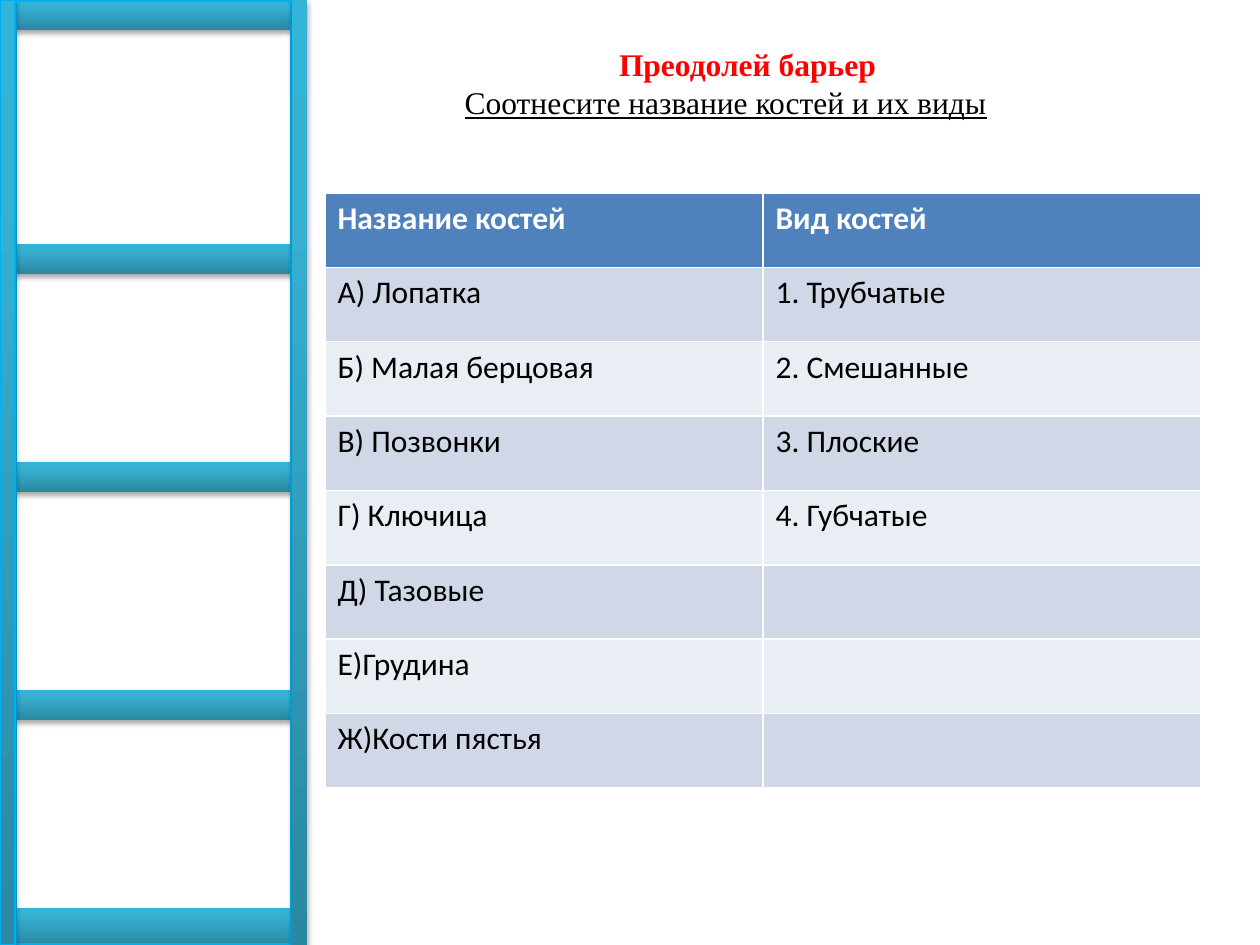
import copy

import lxml.etree
import pptx
import pptx.dml.color
import pptx.enum.shapes
import pptx.enum.text
import pptx.oxml.ns
import pptx.util

EMU_PER_PX = 914400 / 126
COLORS = {
    "dark": "2A88A2", "middle": "37B1D2", "light": "34B4D6", "outline": "00B0F0",
    "shadow": "000000", "red": "FF0000", "black": "000000", "white": "FFFFFF",
    "header": "4F81BD", "odd": "D0D8E8", "even": "E9EDF4",
}
rgb = {name: pptx.dml.color.RGBColor.from_string(value) for name, value in COLORS.items()}
qn = pptx.oxml.ns.qn


def px(*lengths):
    return [pptx.util.Emu(round(length * EMU_PER_PX)) for length in lengths]


def write_text(paragraph, text, font="Calibri", color="black", bold=False,
               underline=False, align=pptx.enum.text.PP_ALIGN.LEFT):
    paragraph.alignment = align
    run = paragraph.add_run()
    run.text = text
    run.font.name = font
    run.font.size = pptx.util.Pt(18)
    run.font.bold = bold
    run.font.underline = underline
    run.font.color.rgb = rgb[color]


presentation = pptx.Presentation()
presentation.slide_width, presentation.slide_height = px(1260, 945)
slide = presentation.slides.add_slide(presentation.slide_layouts[5])

rungs = [(15, 0, 287, 30), (0, 908, 292, 37)] + [(15, top, 287, 30) for top in (690, 462, 244)]
frame = (15, 0, 277, 945)
left_rail = (0, 0, 15, 945)
right_rail = (292, 0, 15, 945)
line_widths = {frame: 2, left_rail: 0.75}

for box in rungs + [frame, left_rail, right_rail]:
    shape = slide.shapes.add_shape(pptx.enum.shapes.MSO_SHAPE.RECTANGLE, *px(*box))
    shape.shadow.inherit = False
    if box in line_widths:
        shape.line.color.rgb = rgb["outline"]
        shape.line.width = pptx.util.Pt(line_widths[box])
    else:
        shape.line.fill.background()
    if box == frame:
        shape.fill.background()
        continue

    shape.fill.gradient()
    shape.fill.gradient_angle = 90
    properties = shape._element.spPr
    stop_list = properties.find(".//" + qn("a:gsLst"))
    stop_list.append(copy.deepcopy(stop_list[-1]))
    stops = zip(shape.fill.gradient_stops, (0, 0.8, 1), ("dark", "middle", "light"))
    for stop, position, color in stops:
        stop.position = position
        stop.color.rgb = rgb[color]

    shadow = lxml.etree.SubElement(
        properties.find(qn("a:effectLst")), qn("a:outerShdw"),
        blurRad=str(pptx.util.Pt(3.1)), dist=str(pptx.util.Pt(1.8)),
        dir="5400000", rotWithShape="0")
    shadow_color = lxml.etree.SubElement(shadow, qn("a:srgbClr"), val=COLORS["shadow"])
    lxml.etree.SubElement(shadow_color, qn("a:alpha"), val="35000")

title = slide.shapes.title
title.left, title.top, title.width, title.height = px(452, 39, 591, 89)
title.text_frame.word_wrap = True
title.text_frame.auto_size = pptx.enum.text.MSO_AUTO_SIZE.NONE
title.text_frame.vertical_anchor = pptx.enum.text.MSO_ANCHOR.TOP
write_text(title.text_frame.paragraphs[0], "Преодолей барьер", font="Times New Roman",
           color="red", bold=True, align=pptx.enum.text.PP_ALIGN.CENTER)
write_text(title.text_frame.add_paragraph(), "Соотнесите название костей и их виды",
           font="Times New Roman", underline=True)

rows = [
    ("Название костей", "Вид костей"),
    ("А) Лопатка", "1. Трубчатые"),
    ("Б) Малая берцовая", "2. Смешанные"),
    ("В) Позвонки", "3. Плоские"),
    ("Г) Ключица", "4. Губчатые"),
    ("Д) Тазовые", ""),
    ("Е)Грудина", ""),
    ("Ж)Кости пястья", ""),
]
table = slide.shapes.add_table(len(rows), 2, *px(325, 193, 876, 595)).table
for row_index, row in enumerate(rows):
    is_header = row_index == 0
    fill_color = "header" if is_header else "odd" if row_index % 2 else "even"
    for column_index, text in enumerate(row):
        cell = table.cell(row_index, column_index)
        cell.fill.solid()
        cell.fill.fore_color.rgb = rgb[fill_color]
        if text:
            write_text(cell.text_frame.paragraphs[0], text, bold=is_header,
                       color="white" if is_header else "black")

presentation.save("out.pptx")
